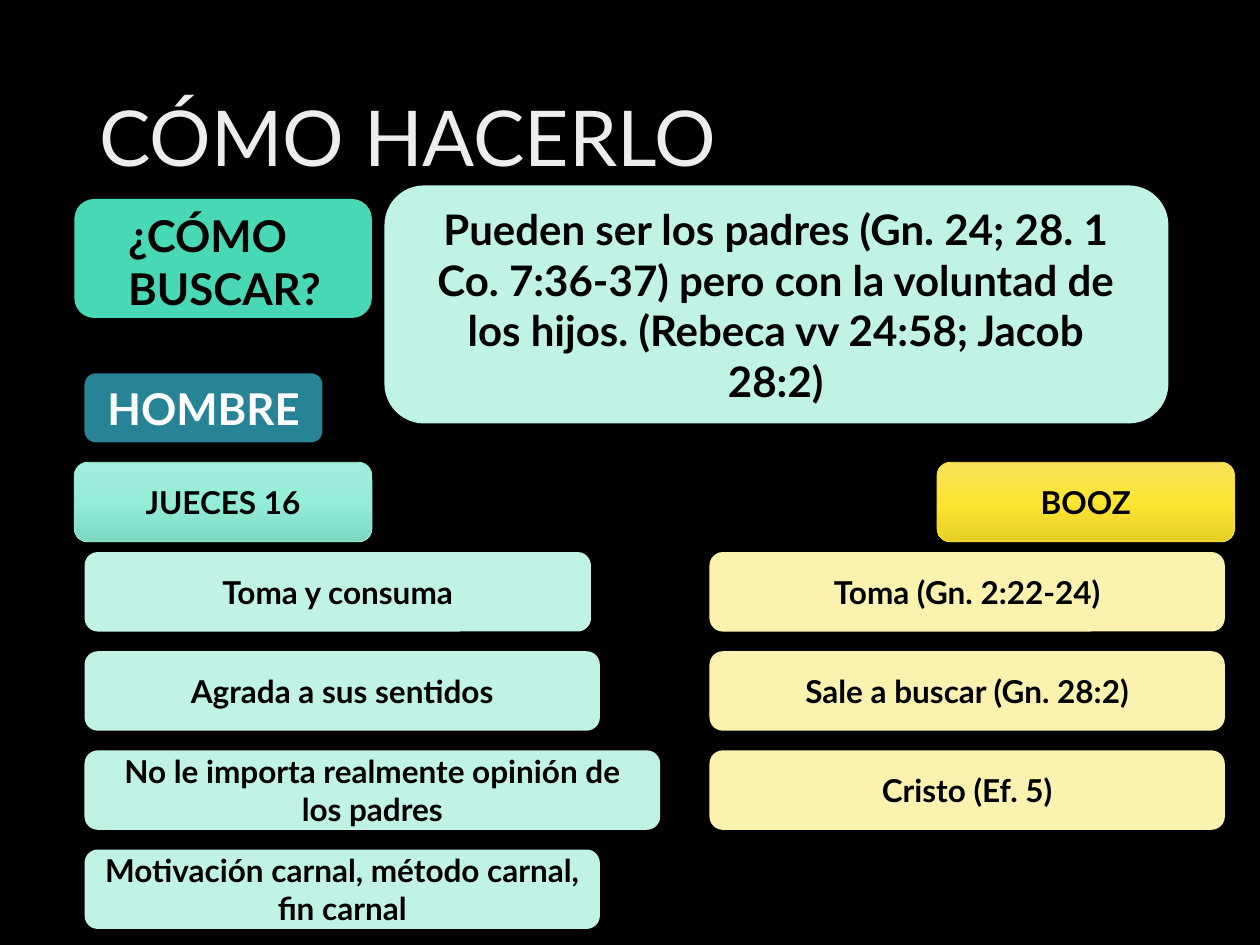
"""Build the slide "CÓMO HACERLO" with its two columns of compared points."""
from lxml import etree
from pptx import Presentation
from pptx import util as u
from pptx.dml.color import RGBColor
from pptx.enum import shapes, text
from pptx.oxml.ns import qn

FONT = "Lato"
BLACK = RGBColor(0, 0, 0)
WHITE = RGBColor(255, 255, 255)
TEAL = RGBColor(0x48, 0xD8, 0xB5)
BLUE = RGBColor(0x26, 0x84, 0x96)
MINT = RGBColor(0xC1, 0xF2, 0xE6)
CREAM = RGBColor(0xFB, 0xF2, 0xB0)
MINT_LINE = RGBColor(0x97, 0xE9, 0xD5)
GOLD_LINE = RGBColor(0xF4, 0xDE, 0x3A)
SILVER_STOPS = [(0, "BFBFBF"), (28, "EDEDED"), (100, "FFFFFF")]
MINT_STOPS = [(0, "A4EDDB"), (50, "93EDD7"), (100, "7DD8C2")]
GOLD_STOPS = [(0, "F8E35C"), (50, "FDE531"), (100, "E5CE27")]

TITLE = "CÓMO HACERLO"
ANSWER = ("Pueden ser los padres (Gn. 24; 28. 1 Co. 7:36-37) pero con la voluntad "
          "de los hijos. (Rebeca vv 24:58; Jacob 28:2)")
QUESTION = ["¿CÓMO", "BUSCAR?"]
HEADINGS = [
    ("JUECES 16", 42.5, MINT_STOPS, MINT_LINE),
    ("BOOZ", 535.5, GOLD_STOPS, GOLD_LINE),
]
COLUMNS = [
    (48.3, MINT, [
        ("Toma y consuma", 289.4),
        ("Agrada a sus sentidos", 294.5),
        ("No le importa realmente opinión de los padres", 329),
        ("Motivación carnal, método carnal, fin carnal", 294.5),
    ]),
    (405.4, CREAM, [
        ("Toma (Gn. 2:22-24)", 294.5),
        ("Sale a buscar (Gn. 28:2)", 294.5),
        ("Cristo (Ef. 5)", 294.5),
    ]),
]
HEADING_TOP, HEADING_WIDTH = 264.2, 170
ROW_TOP, ROW_STEP, ROW_HEIGHT = 315.5, 56.65, 45.4


def points(*lengths):
    return [u.Pt(length) for length in lengths]


def apply_gradient(fill, parent, stops, angle):
    fill.gradient()
    fill.gradient_angle = 360 - angle
    stop_list = parent.find(qn("a:gradFill")).find(qn("a:gsLst"))
    for old in list(stop_list):
        stop_list.remove(old)
    for position, colour in stops:
        stop = etree.SubElement(stop_list, qn("a:gs"), pos=str(position * 1000))
        etree.SubElement(stop, qn("a:srgbClr"), val=colour)


def write(box, lines, size=18, colour=BLACK, bold=True,
          align=text.PP_ALIGN.CENTER, anchor=text.MSO_ANCHOR.MIDDLE):
    frame = box.text_frame
    frame.word_wrap = True
    frame.vertical_anchor = anchor
    for index, line in enumerate(lines):
        para = frame.add_paragraph() if index else frame.paragraphs[0]
        para.alignment = align
        span = para.add_run()
        span.text = line
        span.font.name, span.font.size, span.font.bold = FONT, u.Pt(size), bold
        span.font.color.rgb = colour
    return frame


def add_panel(page, area, colour=None, stops=None, line=None):
    box = page.shapes.add_shape(shapes.MSO_SHAPE.ROUNDED_RECTANGLE, *points(*area))
    box.shadow.inherit = False
    if stops:
        apply_gradient(box.fill, box.element.spPr, stops, 90)
    else:
        box.fill.solid()
        box.fill.fore_color.rgb = colour
    if line:
        box.line.color.rgb = line
        box.line.width = u.Pt(0.5)
    else:
        box.line.fill.background()
    return box


def add_title(page):
    title = page.shapes.title
    title.left, title.top, title.width, title.height = points(49.5, 28.8, 621, 104.4)
    frame = write(title, [TITLE], size=44, bold=False, align=text.PP_ALIGN.LEFT)
    frame.auto_size = text.MSO_AUTO_SIZE.NONE
    para = frame.paragraphs[0]
    para.line_spacing = 0.9
    span = para.runs[0]
    apply_gradient(span.font.fill, span.font.fill and span._r.rPr, SILVER_STOPS, 80)


def add_introduction(page):
    add_panel(page, (219.7, 106, 448, 136), MINT)
    answer = page.shapes.add_textbox(*points(242, 113, 402.5, 124))
    write(answer, [ANSWER], size=24, anchor=text.MSO_ANCHOR.TOP)
    add_panel(page, (42.5, 113.7, 170, 68), TEAL)
    question = page.shapes.add_textbox(*points(66.2, 116, 122.4, 67.7))
    frame = write(question, QUESTION, size=25, align=text.PP_ALIGN.LEFT,
                  anchor=text.MSO_ANCHOR.TOP)
    frame.margin_right = 0
    man = add_panel(page, (48.3, 213.3, 136, 39.5), BLUE)
    write(man, ["HOMBRE"], size=25, colour=WHITE)


def add_comparison(page):
    for label, left, stops, line in HEADINGS:
        area = (left, HEADING_TOP, HEADING_WIDTH, ROW_HEIGHT)
        write(add_panel(page, area, stops=stops, line=line), [label])
    for left, colour, rows in COLUMNS:
        for index, (label, width) in enumerate(rows):
            area = (left, ROW_TOP + index * ROW_STEP, width, ROW_HEIGHT)
            write(add_panel(page, area, colour), [label])


def main():
    deck = Presentation()
    deck.slide_width, deck.slide_height = points(720, 540)
    page = deck.slides.add_slide(deck.slide_layouts[5])
    page.background.fill.solid()
    page.background.fill.fore_color.rgb = BLACK
    add_title(page)
    add_introduction(page)
    add_comparison(page)
    deck.save("out.pptx")


if __name__ == "__main__":
    main()
